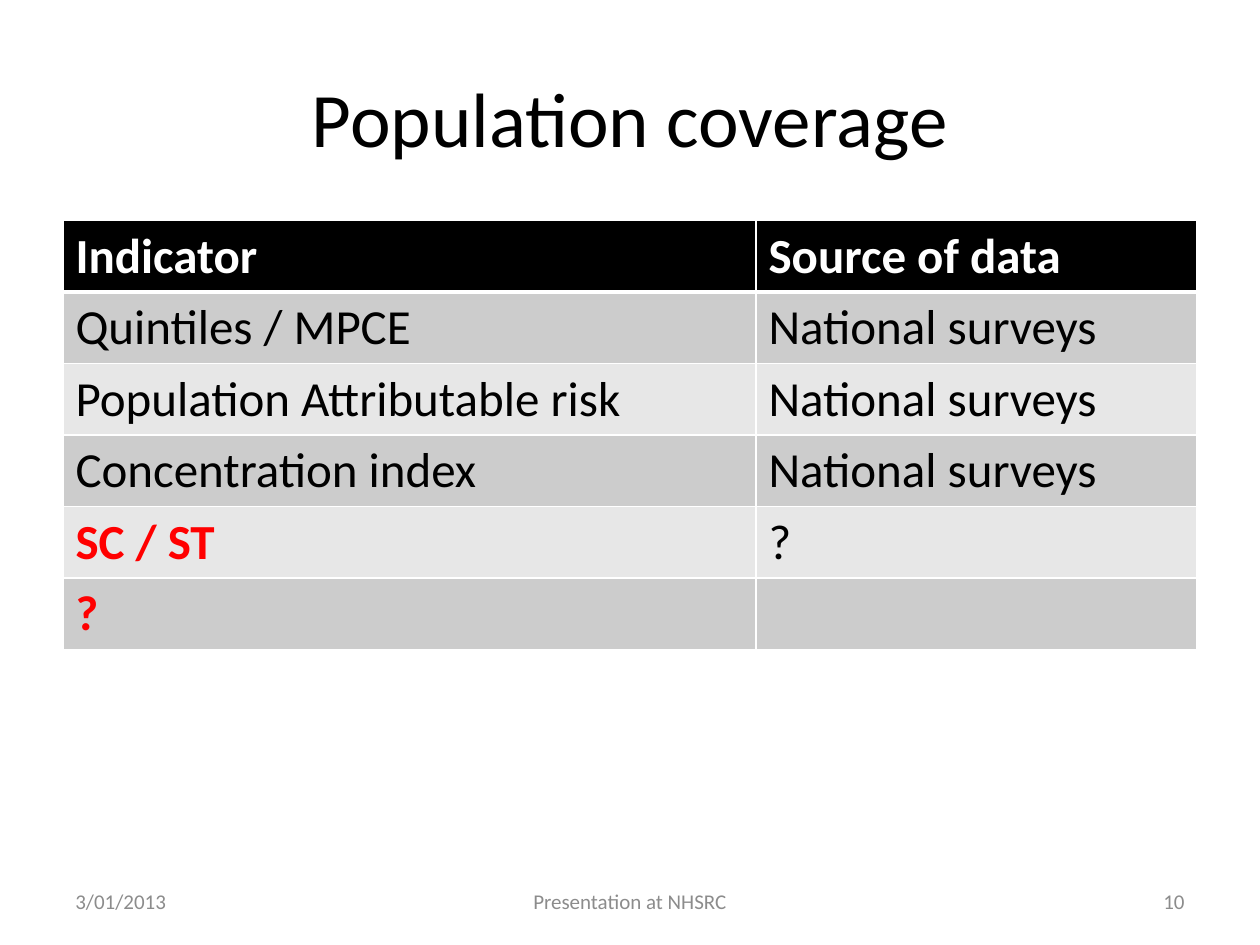
import pptx
import pptx.dml.color
import pptx.enum.text
import pptx.oxml
import pptx.oxml.ns
import pptx.util

Inches = pptx.util.Inches
ALIGN = pptx.enum.text.PP_ALIGN
ANCHOR = pptx.enum.text.MSO_ANCHOR

FONT = "Calibri"
COLORS = {
    "text": "000000",
    "header": "000000",
    "light": "FFFFFF",
    "odd_row": "CCCCCC",
    "even_row": "E7E7E7",
    "accent": "FF0000",
    "footer": "8C8C8C",
}
MARGIN = 0.5
CONTENT_WIDTH = 9
ROWS = [
    ("Indicator", "Source of data"),
    ("Quintiles / MPCE", "National surveys"),
    ("Population Attributable risk", "National surveys"),
    ("Concentration index", "National surveys"),
    ("SC / ST", "?"),
    ("?", ""),
]
ACCENT_ROWS = (4, 5)


def rgb(name):
    return pptx.dml.color.RGBColor.from_string(COLORS[name])


def write(frame, text, size, color="text", bold=False, align=ALIGN.LEFT):
    """Write one formatted paragraph into a text frame."""
    para = frame.paragraphs[0]
    para.alignment = align
    para.font.size = pptx.util.Pt(size)
    if text:
        span = para.add_run()
        span.text = text
        span.font.name = FONT
        span.font.size = pptx.util.Pt(size)
        span.font.bold = bold
        span.font.color.rgb = rgb(color)


def add_text(page, area, text, **style):
    """Place a vertically centred text box in area (left, top, width, height)."""
    box = page.shapes.add_textbox(*map(Inches, area))
    box.text_frame.word_wrap = True
    box.text_frame.vertical_anchor = ANCHOR.MIDDLE
    write(box.text_frame, text, **style)


def set_borders(cell, widths):
    """Draw light borders; widths maps each side to points, in schema order."""
    properties = cell._tc.get_or_add_tcPr()
    for position, (side, points) in enumerate(widths.items()):
        line = pptx.oxml.parse_xml(
            f'<a:ln{side} {pptx.oxml.ns.nsdecls("a")} w="{pptx.util.Pt(points)}">'
            f'<a:solidFill><a:srgbClr val="{COLORS["light"]}"/></a:solidFill>'
            f'</a:ln{side}>'
        )
        properties.insert(position, line)


def add_indicator_table(page, area):
    left, top, width, height = area
    frame = page.shapes.add_table(len(ROWS), 2, *map(Inches, area))
    table = frame.table
    for column, column_width in zip(table.columns, (5.5, width - 5.5)):
        column.width = Inches(column_width)

    for row_index, texts in enumerate(ROWS):
        table.rows[row_index].height = Inches(height / len(ROWS))
        is_header = row_index == 0
        fill = "header" if is_header else "odd_row" if row_index % 2 else "even_row"
        for column_index, text in enumerate(texts):
            cell = table.cell(row_index, column_index)
            cell.fill.solid()
            cell.fill.fore_color.rgb = rgb(fill)
            set_borders(cell, {
                "L": 1,
                "R": 1,
                "T": 3 if row_index == 1 else 1,
                "B": 3 if is_header else 1,
            })
            is_accent = row_index in ACCENT_ROWS and column_index == 0
            color = "light" if is_header else "accent" if is_accent else "text"
            write(cell.text_frame, text, size=28, color=color,
                  bold=is_header or is_accent)


def add_footer(page, area):
    """Date at the left, event in the middle, page number at the right."""
    left, top, width, height = area
    side, middle = 2.33, 3.17
    parts = [
        ("3/01/2013", left, side, ALIGN.LEFT),
        ("Presentation at NHSRC", left + (width - middle) / 2, middle, ALIGN.CENTER),
        ("10", left + width - side, side, ALIGN.RIGHT),
    ]
    for text, part_left, part_width, align in parts:
        add_text(page, (part_left, top, part_width, height), text,
                 size=12, color="footer", align=align)


def main():
    deck = pptx.Presentation()
    deck.slide_width, deck.slide_height = Inches(10), Inches(7.5)
    page = deck.slides.add_slide(deck.slide_layouts[6])

    # Title
    add_text(page, (MARGIN, 0.3, CONTENT_WIDTH, 1.25), "Population coverage",
             size=44, align=ALIGN.CENTER)
    # Indicators and their sources
    add_indicator_table(page, (MARGIN, 1.75, CONTENT_WIDTH, 3.4))
    # Footer line
    add_footer(page, (MARGIN, 6.95, CONTENT_WIDTH, 0.4))

    deck.save("out.pptx")


if __name__ == "__main__":
    main()
